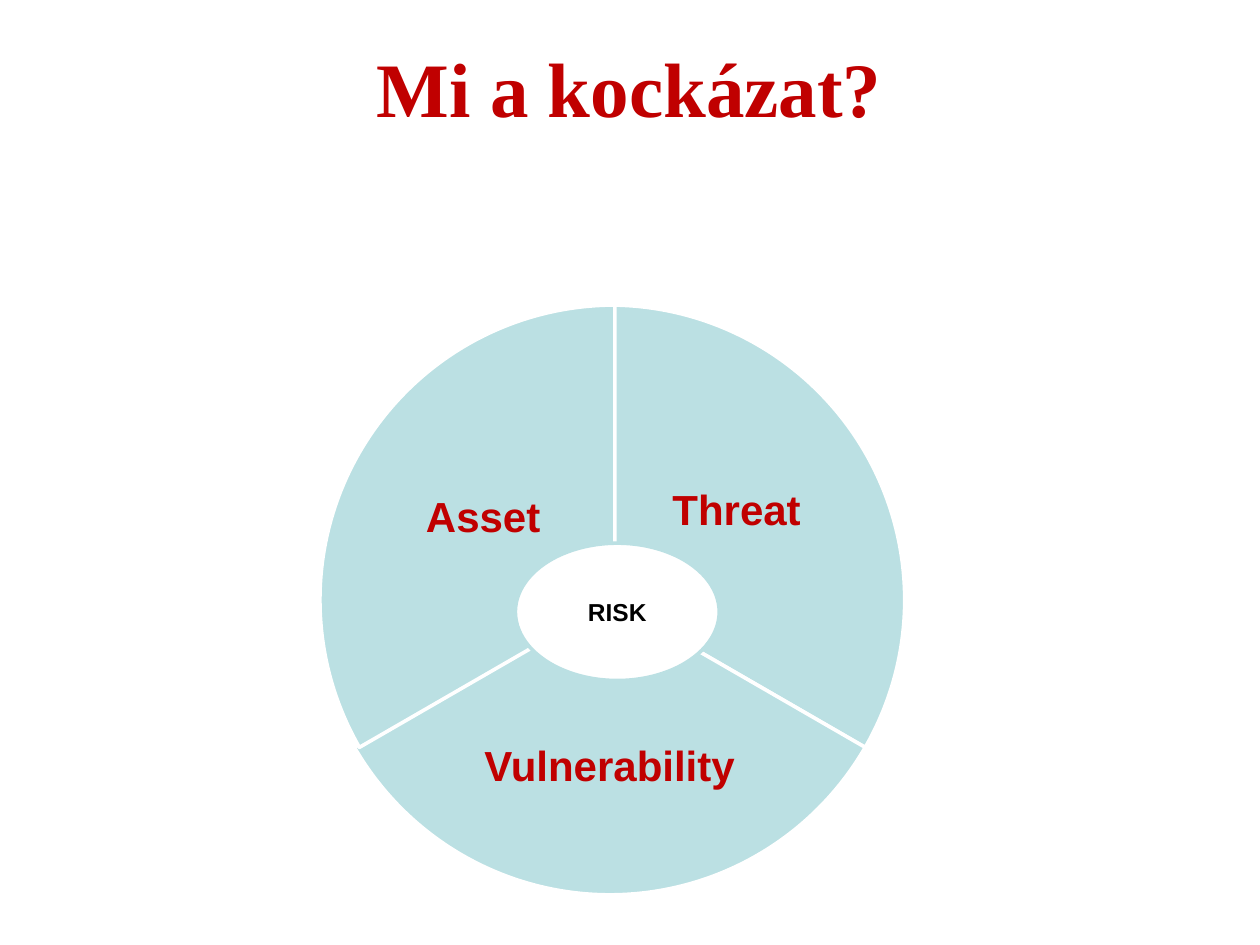
from dataclasses import dataclass

from pptx import Presentation
from pptx.dml.color import RGBColor
from pptx.enum.shapes import MSO_SHAPE
from pptx.enum.text import MSO_ANCHOR, PP_ALIGN
from pptx.util import Cm, Pt

PIE = MSO_SHAPE.PIE
OVAL = MSO_SHAPE.OVAL
MIDDLE = MSO_ANCHOR.MIDDLE
CENTER = PP_ALIGN.CENTER


@dataclass(frozen=True)
class Theme:
    red: RGBColor = RGBColor(0xC0, 0x00, 0x00)
    aqua: RGBColor = RGBColor(0xBB, 0xE0, 0xE3)
    white: RGBColor = RGBColor(0xFF, 0xFF, 0xFF)
    black: RGBColor = RGBColor(0x00, 0x00, 0x00)
    title_font: str = "Times New Roman"
    body_font: str = "Arial"
    title_size: int = 44
    label_size: int = 24
    center_size: int = 14
    outline: float = 2.08


class SlideBuilder:
    def __init__(self, slide, theme):
        self.slide = slide
        self.theme = theme

    def add_text(self, shape, text, font_name, size, color):
        frame = shape.text_frame
        frame.word_wrap = True
        frame.vertical_anchor = MIDDLE
        paragraph = frame.paragraphs[0]
        paragraph.alignment = CENTER
        run = paragraph.add_run()
        run.text = text
        run.font.name = font_name
        run.font.size = Pt(size)
        run.font.bold = True
        run.font.color.rgb = color
        return frame

    def shape(self, kind, box, fill, line):
        shape = self.slide.shapes.add_shape(kind, *map(Cm, box))
        shape.shadow.inherit = False
        shape.fill.solid()
        shape.fill.fore_color.rgb = fill
        shape.line.color.rgb = line
        shape.line.width = Pt(self.theme.outline)
        return shape

    def title(self, text, box):
        text_box = self.slide.shapes.add_textbox(*map(Cm, box))
        self.add_text(text_box, text, self.theme.title_font, self.theme.title_size, self.theme.red)

    def sector(self, box, start, end):
        pie = self.shape(PIE, box, self.theme.aqua, self.theme.white)
        for index, degrees in enumerate((start, end)):
            pie.adjustments[index] = degrees * 0.6

    def label(self, text, box):
        text_box = self.slide.shapes.add_textbox(*map(Cm, box))
        frame = self.add_text(text_box, text, self.theme.body_font, self.theme.label_size, self.theme.red)
        frame.margin_left = frame.margin_right = Cm(0.08)
        frame.margin_top = frame.margin_bottom = Cm(0.08)
        frame.paragraphs[0].line_spacing = 0.9

    def center(self, text, box):
        oval = self.shape(OVAL, box, self.theme.white, self.theme.aqua)
        self.add_text(oval, text, self.theme.body_font, self.theme.center_size, self.theme.black)


def main():
    presentation = Presentation()
    presentation.slide_width = Cm(25.4)
    presentation.slide_height = Cm(19.05)
    slide = presentation.slides.add_slide(presentation.slide_layouts[6])
    builder = SlideBuilder(slide, Theme())

    builder.title("Mi a kockázat?", (2.16, 0.15, 21.06, 3.18))

    top, diameter, sweep = 6.15, 11.89, 120
    sectors = [
        ("Threat", 6.35, (12.83, 8.33, 4.04, 3.96)),
        ("Vulnerability", 6.35, (9.6, 13.64, 5.38, 3.68)),
        ("Asset", 6.45, (7.72, 8.48, 4.04, 3.96)),
    ]
    for index, (text, left, label_box) in enumerate(sectors):
        start = (270 + index * sweep) % 360
        end = (start + sweep) % 360
        builder.sector((left, top, diameter, diameter), start, end)
        builder.label(text, label_box)

    builder.center("RISK", (10.39, 10.95, 4.11, 2.77))
    presentation.save("out.pptx")


if __name__ == "__main__":
    main()
